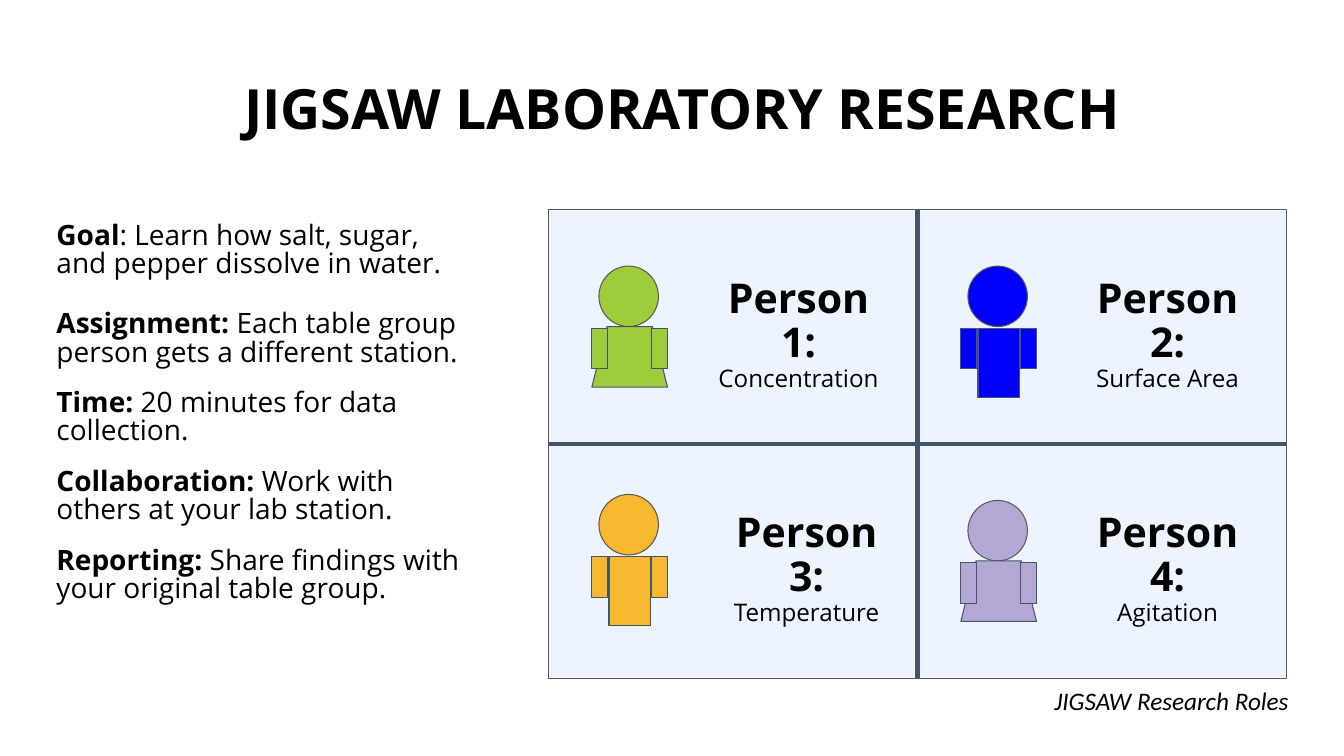
from lxml.etree import SubElement
from pptx import Presentation
from pptx.dml.color import RGBColor
from pptx.enum.shapes import MSO_CONNECTOR, MSO_SHAPE as SHAPE
from pptx.enum.text import MSO_ANCHOR as ANCHOR, PP_ALIGN as ALIGN
from pptx.oxml.ns import qn
from pptx.util import Pt

PX = 9144  # EMU per px, 100 px to the inch

BLACK = RGBColor(0x00, 0x00, 0x00)
PANEL = RGBColor(0xEE, 0xF4, 0xFF)
OUTLINE = RGBColor(0x59, 0x59, 0x59)
SLATE = RGBColor(0x44, 0x54, 0x6A)
GREEN = RGBColor(0x9F, 0xCC, 0x3B)
BLUE = RGBColor(0x00, 0x00, 0xFF)
ORANGE = RGBColor(0xF5, 0xB8, 0x2E)
LILAC = RGBColor(0xB4, 0xA7, 0xD6)

INSTRUCTIONS = [
    ("Goal", ": Learn how salt, sugar, and pepper dissolve in water.", 0),
    ("Assignment:", " Each table group person gets a different station.", 23),
    ("Time:", " 20 minutes for data collection.", 16),
    ("Collaboration:", " Work with others at your lab station.", 16),
    ("Reporting:", " Share findings with your original table group.", 16),
]

# role, colour, wears a dress, top of the figure in its cell, label left and width
ROLES = [
    ("Concentration", GREEN, True, 56, 144, 208),
    ("Surface Area", BLUE, False, 56, 149, 198),
    ("Temperature", ORANGE, False, 50, 157, 198),
    ("Agitation", LILAC, True, 56, 149, 198),
]


def px(*lengths):
    return [round(length * PX) for length in lengths]


def add_text(slide, box, paragraphs, font="Open Sans", align=ALIGN.LEFT,
             anchor=ANCHOR.TOP, spacing=1.0, inset=13, italic=False):
    """Each paragraph is (runs, space before); each run is (text, size, bold)."""
    frame = slide.shapes.add_textbox(*px(*box)).text_frame
    frame.word_wrap = True
    frame.vertical_anchor = anchor
    frame.margin_left = frame.margin_right = inset * PX
    frame.margin_top = frame.margin_bottom = inset * PX
    for index, (runs, before) in enumerate(paragraphs):
        paragraph = frame.add_paragraph() if index else frame.paragraphs[0]
        paragraph.alignment = align
        paragraph.line_spacing = spacing
        paragraph.space_before = Pt(before)
        for text, size, bold in runs:
            run = paragraph.add_run()
            run.text = text
            run.font.name = font
            run.font.size = Pt(size)
            run.font.bold = bold
            run.font.italic = italic
            run.font.color.rgb = BLACK


def add_block(slide, kind, box, fill, line=SLATE):
    block = slide.shapes.add_shape(kind, *px(*box))
    block.shadow.inherit = False
    block.fill.solid()
    block.fill.fore_color.rgb = fill
    block.line.color.rgb = line
    block.line.width = Pt(0.75)


def add_divider(slide, *ends):
    divider = slide.shapes.add_connector(MSO_CONNECTOR.STRAIGHT, *px(*ends))
    divider.line.color.rgb = SLATE
    divider.line.width = Pt(3)
    SubElement(divider._element.spPr, qn("a:effectLst"))


def add_person(slide, left, top, colour, dress):
    add_block(slide, SHAPE.OVAL, (left + 7, top, 59, 60), colour, OUTLINE)
    if dress:
        add_block(slide, SHAPE.TRAPEZOID, (left, top + 60, 75, 60), colour)
    else:
        add_block(slide, SHAPE.RECTANGLE, (left + 17, top + 62, 41, 68), colour)
    for arm in (59, 0):
        add_block(slide, SHAPE.RECTANGLE, (left + arm, top + 62, 16, 40), colour)


def add_instructions(slide, box):
    add_text(slide, box, [([(label, 20, True), (detail, 20, False)], before)
                          for label, detail, before in INSTRUCTIONS], spacing=0.84)


def add_roles(slide, left, top, width, height):
    add_block(slide, SHAPE.RECTANGLE, (left, top, width, height), PANEL, OUTLINE)
    cell_width, cell_height = width / 2, height / 2
    middle_x, middle_y = left + cell_width, top + cell_height
    add_divider(slide, middle_x, top, middle_x, top + height)
    add_divider(slide, left, middle_y, left + width, middle_y)
    for index, (role, colour, dress, drop, label_left, label_width) in enumerate(ROLES):
        row, column = divmod(index, 2)
        x, y = left + column * cell_width, top + row * cell_height
        add_person(slide, x + 43, y + drop, colour, dress)
        add_text(slide, (x + label_left, y + 28, label_width, 193),
                 [([(f"Person {index + 1}:", 29.3, True)], 0),
                  ([(role, 17.3, False)], 0)],
                 align=ALIGN.CENTER, anchor=ANCHOR.MIDDLE, spacing=0.9)


def main():
    deck = Presentation()
    deck.slide_width, deck.slide_height = px(1333, 750)
    slide = deck.slides.add_slide(deck.slide_layouts[6])
    add_text(slide, (77, 61, 1199, 84),
             [([("JIGSAW LABORATORY RESEARCH", 39.6, True)], 0)], align=ALIGN.CENTER)
    add_instructions(slide, (43, 208, 432, 501))
    add_roles(slide, 544, 208, 732, 465)
    add_text(slide, (763, 680, 525, 30), [([("JIGSAW Research Roles", 18, False)], 0)],
             font="Calibri", align=ALIGN.RIGHT, anchor=ANCHOR.MIDDLE, inset=10, italic=True)
    deck.save("out.pptx")


if __name__ == "__main__":
    main()
